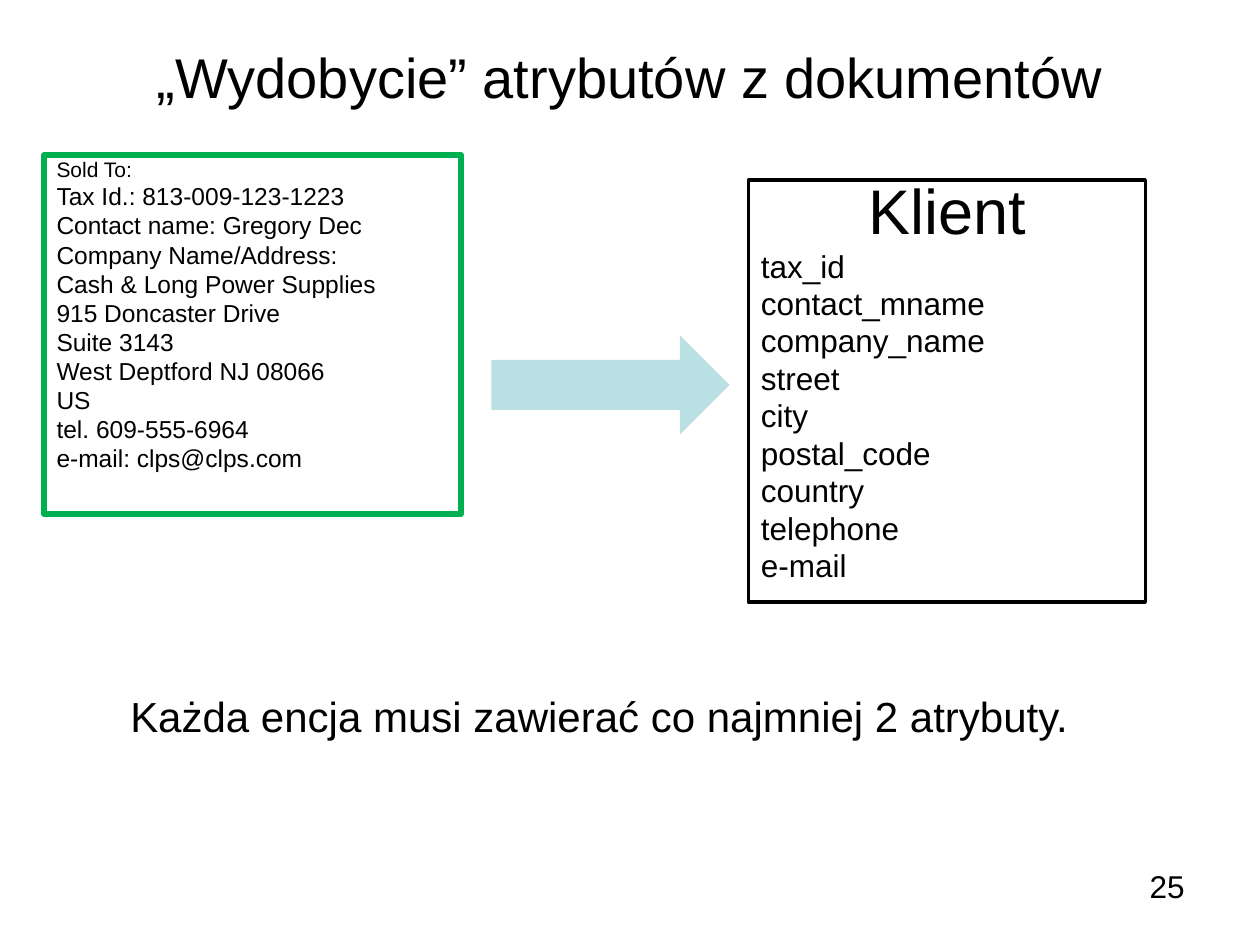
from dataclasses import dataclass

import pptx
import pptx.dml.color
import pptx.enum.shapes
import pptx.enum.text
import pptx.util

Inches = pptx.util.Inches
Pt = pptx.util.Pt
Align = pptx.enum.text.PP_ALIGN
Anchor = pptx.enum.text.MSO_ANCHOR
Shape = pptx.enum.shapes.MSO_SHAPE

FONT = "Arial"
BLACK = "000000"
TIGHT_SPACING = 0.8
SPACE_BEFORE_RATIO = 0.23


@dataclass
class Line:
    text: str
    size: float
    align: Align = Align.LEFT


@dataclass
class Area:
    left: float
    top: float
    width: float
    height: float

    def lengths(self) -> tuple:
        return tuple(map(Inches, (self.left, self.top, self.width, self.height)))


@dataclass
class Card:
    area: Area
    lines: list[Line]
    outline: str
    outline_width: float


def color(value: str) -> pptx.dml.color.RGBColor:
    return pptx.dml.color.RGBColor.from_string(value)


def write_lines(shape, lines: list[Line], anchor: Anchor = Anchor.TOP, spacing: float = TIGHT_SPACING) -> None:
    frame = shape.text_frame
    frame.word_wrap = True
    frame.vertical_anchor = anchor
    for index, line in enumerate(lines):
        para = frame.add_paragraph() if index else frame.paragraphs[0]
        para.text = line.text
        para.alignment = line.align
        para.line_spacing = spacing
        if index:
            para.space_before = Pt(round(line.size * SPACE_BEFORE_RATIO, 1))
        para.font.name = FONT
        para.font.size = Pt(line.size)
        para.font.color.rgb = color(BLACK)


def add_label(page, area: Area, line: Line, anchor: Anchor = Anchor.TOP, spacing: float = 1.0) -> None:
    box = page.shapes.add_textbox(*area.lengths())
    write_lines(box, [line], anchor, spacing)


def add_filled(page, kind: Shape, area: Area, fill: str):
    shape = page.shapes.add_shape(kind, *area.lengths())
    shape.shadow.inherit = False
    shape.fill.solid()
    shape.fill.fore_color.rgb = color(fill)
    shape.line.fill.background()
    return shape


def add_card(page, card: Card) -> None:
    box = add_filled(page, Shape.RECTANGLE, card.area, "FFFFFF")
    box.line.color.rgb = color(card.outline)
    box.line.width = Pt(card.outline_width)
    write_lines(box, card.lines)


INVOICE_DETAILS = [
    "Tax Id.: 813-009-123-1223",
    "Contact name: Gregory Dec",
    "Company Name/Address:",
    "Cash & Long Power Supplies",
    "915 Doncaster Drive",
    "Suite 3143",
    "West Deptford NJ 08066",
    "US",
    "tel. 609-555-6964",
    "e-mail: clps@clps.com",
]
CLIENT_ATTRIBUTES = [
    "tax_id",
    "contact_mname",
    "company_name",
    "street",
    "city",
    "postal_code",
    "country",
    "telephone",
    "e-mail",
]
CARDS = [
    Card(
        Area(0.35, 1.23, 3.31, 2.85),
        [Line("Sold To:", 12)] + [Line(text, 14) for text in INVOICE_DETAILS],
        "00B050",
        3,
    ),
    Card(
        Area(5.94, 1.43, 3.15, 3.35),
        [Line("Klient", 36, Align.CENTER)] + [Line(text, 18) for text in CLIENT_ATTRIBUTES],
        BLACK,
        2,
    ),
]


def main() -> None:
    deck = pptx.Presentation()
    deck.slide_width, deck.slide_height = Inches(10), Inches(7.5)
    page = deck.slides.add_slide(deck.slide_layouts[6])

    title = Line("„Wydobycie” atrybutów z dokumentów", 32, Align.CENTER)
    add_label(page, Area(0.5, 0.3, 9, 0.61), title, Anchor.MIDDLE)
    add_label(page, Area(7.17, 6.83, 2.33, 0.52), Line("25", 18, Align.RIGHT))
    for card in CARDS:
        add_card(page, card)
    add_filled(page, Shape.RIGHT_ARROW, Area(3.9, 2.66, 1.89, 0.79), "BBE0E3")
    rule = Line("Każda encja musi zawierać co najmniej 2 atrybuty.", 24, Align.CENTER)
    add_label(page, Area(0.62, 5.51, 8.27, 0.42), rule, spacing=TIGHT_SPACING)

    deck.save("out.pptx")


if __name__ == "__main__":
    main()
